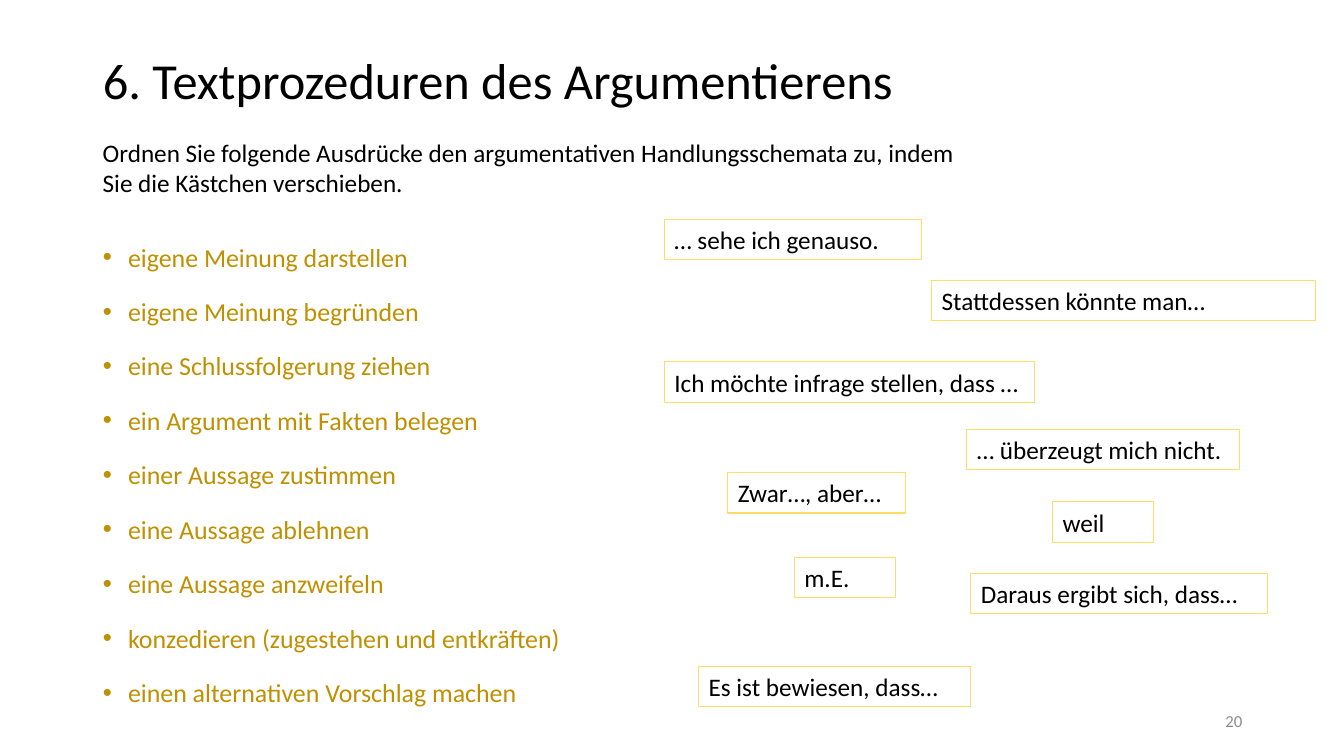
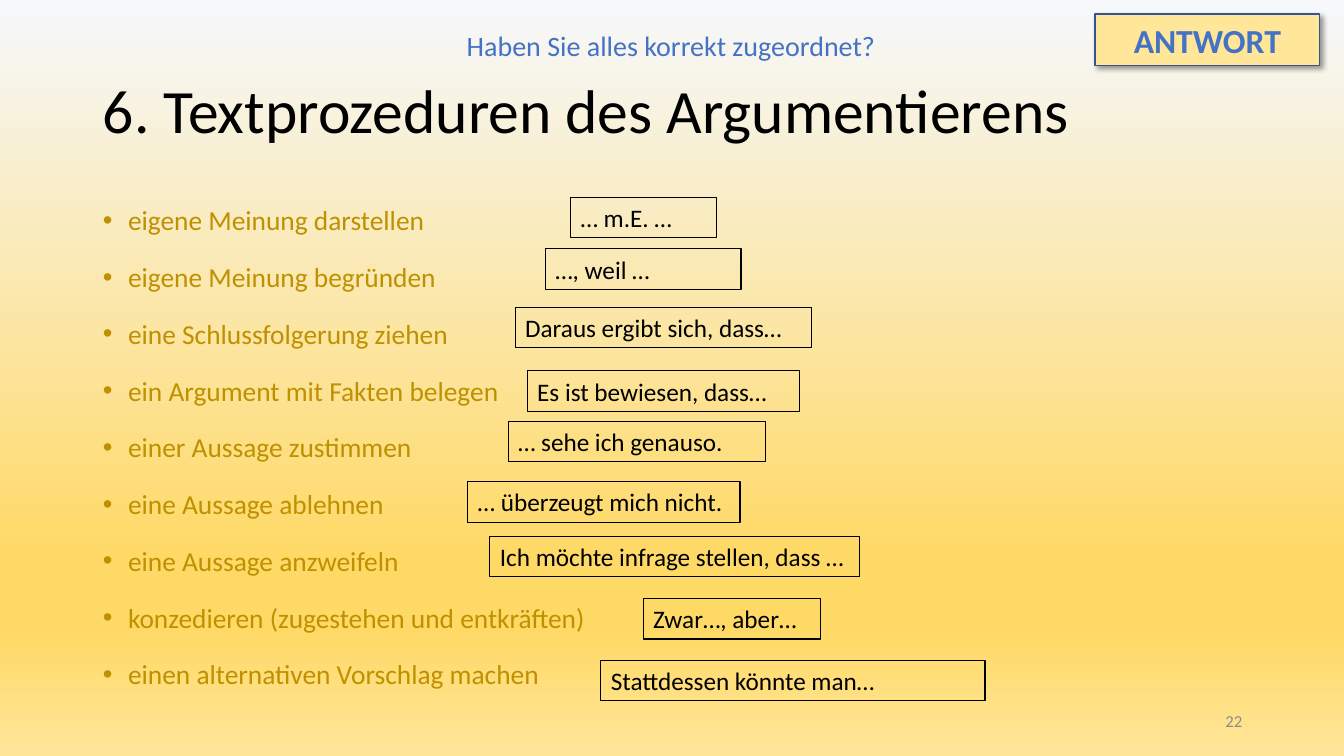
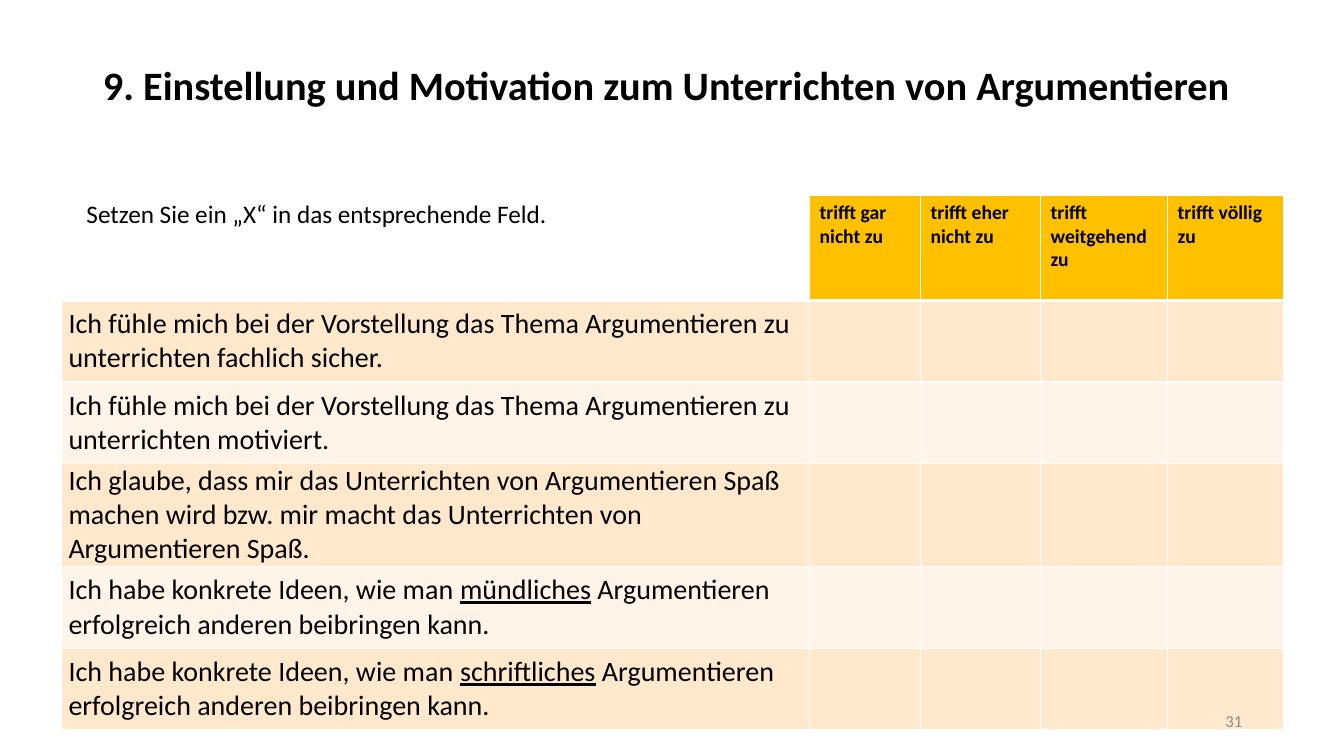
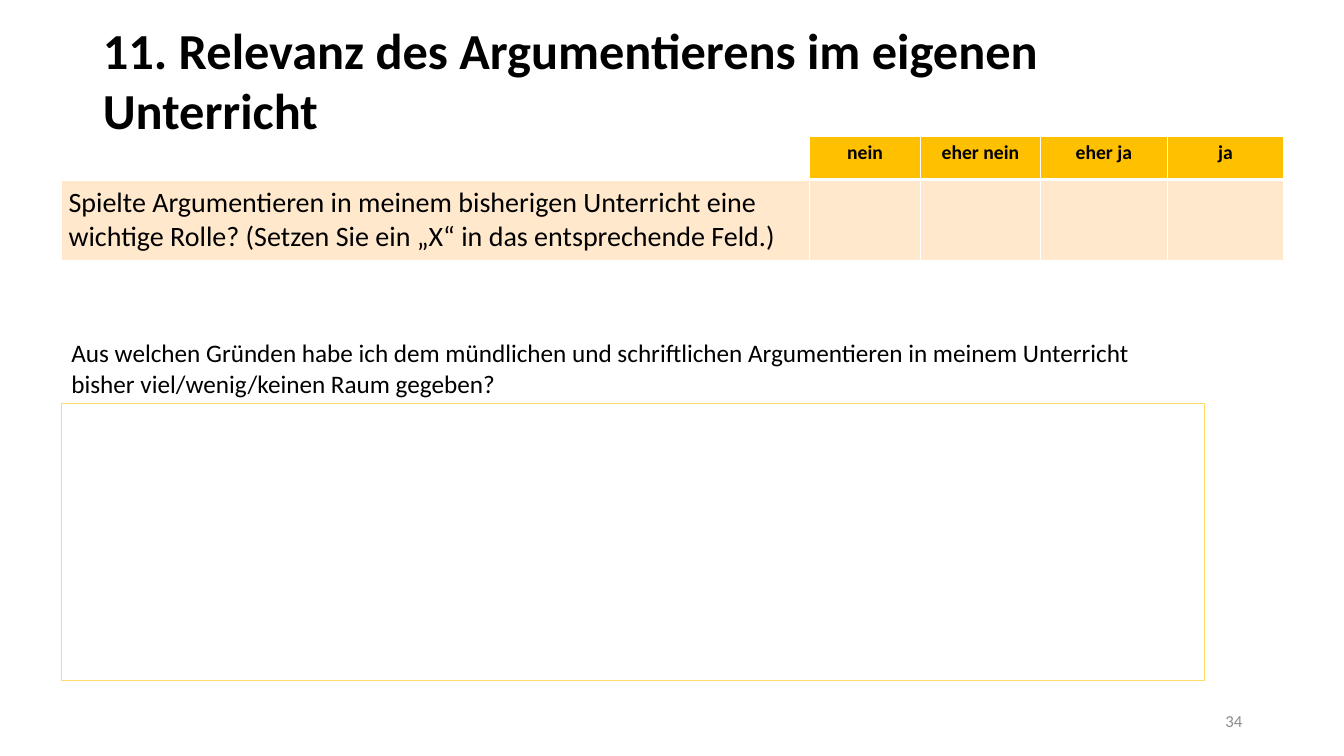
from lxml.etree import SubElement as sub
from pptx import Presentation
from pptx.dml.color import RGBColor
from pptx.enum.shapes import MSO_SHAPE
from pptx.enum.text import MSO_ANCHOR as ANC, MSO_AUTO_SIZE as AUTO, PP_ALIGN as ALIGN
from pptx.oxml import parse_xml
from pptx.oxml.ns import nsdecls, qn
from pptx.util import Inches, Pt

# Shared look
FONT = "Calibri"
HUE = {"ink": "000000", "gold": "BF9000", "edge": "FFDB69", "head": "FFC000",
       "odd": "FFE8CC", "even": "FFF4E7", "white": "FFFFFF", "blue": "4472C4",
       "navy": "325491", "cream": "FFE699", "grey": "8C8C8C"}
SKY = [(0, "F6F8FC"), (74, "FFD966"), (83, "FFD966"), (100, "FFE699")]
COLS = [7.42, 1.1, 1.19, 1.26, 1.15]
ROW, CARD = 0.81, 0.4

# Content
TOPIC = "6. Textprozeduren des Argumentierens"
ACTS = ["eigene Meinung darstellen", "eigene Meinung begründen",
        "eine Schlussfolgerung ziehen", "ein Argument mit Fakten belegen",
        "einer Aussage zustimmen", "eine Aussage ablehnen",
        "eine Aussage anzweifeln", "konzedieren (zugestehen und entkräften)",
        "einen alternativen Vorschlag machen"]
# text, width, loose place, solved place
CARDS = [
    ("Es ist bewiesen, dass…", 2.7, (6.93, 6.61), (5.23, 3.68)),
    ("… überzeugt mich nicht.", 2.7, (9.59, 4.26), (4.64, 4.78)),
    ("Ich möchte infrage stellen, dass …", 3.67, (6.59, 3.59), (4.86, 5.32)),
    ("… sehe ich genauso.", 2.55, (6.59, 2.18), (5.04, 4.18)),
    ("Daraus ergibt sich, dass…", 2.94, (9.63, 5.69), (5.11, 3.05)),
    ("Zwar…, aber…", 1.76, (7.22, 4.69), (6.38, 5.94)),
    ("Stattdessen könnte man…", 3.81, (9.24, 2.78), (5.96, 6.55)),
]
LOOSE = [("m.E.", 1, (7.88, 5.53)), ("weil", 1, (10.44, 4.98))]
SOLVED = [("… m.E. …", 1.45, (5.66, 1.96)), ("…, weil …", 1.94, (5.41, 2.47))]
TASK = ("Ordnen Sie folgende Ausdrücke den argumentativen Handlungsschemata zu, "
        "indem Sie die Kästchen verschieben.")
SCALE = ["trifft gar nicht zu", "trifft eher nicht zu", "trifft weitgehend zu",
         "trifft völlig zu"]
# Words between asterisks are underlined
CLAIMS = [
    "Ich fühle mich bei der Vorstellung das Thema Argumentieren zu unterrichten fachlich sicher.",
    "Ich fühle mich bei der Vorstellung das Thema Argumentieren zu unterrichten motiviert.",
    "Ich glaube, dass mir das Unterrichten von Argumentieren Spaß machen wird bzw. "
    "mir macht das Unterrichten von Argumentieren Spaß.",
    "Ich habe konkrete Ideen, wie man *mündliches* Argumentieren erfolgreich anderen beibringen kann.",
    "Ich habe konkrete Ideen, wie man *schriftliches* Argumentieren erfolgreich anderen beibringen kann.",
]
ROLE = ["Spielte Argumentieren in meinem bisherigen Unterricht eine wichtige Rolle? "
        "(Setzen Sie ein „X“ in das entsprechende Feld.)"]
WHY = ("Aus welchen Gründen habe ich dem mündlichen und schriftlichen Argumentieren "
       "in meinem Unterricht bisher viel/wenig/keinen Raum gegeben?")


# Helpers
def rgb(hue):
    return RGBColor.from_string(HUE[hue])


def place(shape, *at):
    for name, val in zip(("left", "top", "width", "height"), at):
        setattr(shape, name, Inches(val))


def write(par, text, size=18, hue="ink", bold=False, **fmt):
    for name, val in fmt.items():
        setattr(par, name, val)
    for i, part in enumerate(text.split("*")):
        run = par.add_run()
        run.text = part
        look = {"name": FONT, "size": Pt(size), "bold": bold}
        if i % 2:
            look["underline"] = True
        for name, val in look.items():
            setattr(run.font, name, val)
        run.font.color.rgb = rgb(hue)


def outline(shape, hue, width):
    shape.line.color.rgb = rgb(hue)
    shape.line.width = Pt(width)


def label(slide, at, text, edge=None, anchor=ANC.TOP, auto=AUTO.SHAPE_TO_FIT_TEXT, **fmt):
    box = slide.shapes.add_textbox(*map(Inches, at))
    frame = box.text_frame
    frame.word_wrap, frame.auto_size, frame.vertical_anchor = True, auto, anchor
    write(frame.paragraphs[0], text, **fmt)
    if edge:
        outline(box, edge, 0.75)


def panel(slide, at, fill, edge):
    box = slide.shapes.add_shape(MSO_SHAPE.RECTANGLE, *map(Inches, at))
    box.shadow.inherit = False
    box.fill.solid()
    box.fill.fore_color.rgb = rgb(fill)
    outline(box, edge, 1)
    return box


def start(deck, layout, title, at, size, bold=False, pitch=0.9):
    slide = deck.slides.add_slide(deck.slide_layouts[layout])
    head = slide.shapes.title
    place(head, *at)
    frame = head.text_frame
    frame.auto_size, frame.vertical_anchor = AUTO.NONE, ANC.MIDDLE
    write(frame.paragraphs[0], title, size, bold=bold, alignment=ALIGN.LEFT, line_spacing=pitch)
    return slide


def number(slide, page):
    label(slide, (9.42, 6.95, 3, 0.4), page, anchor=ANC.MIDDLE, auto=AUTO.NONE,
          size=12, hue="grey", alignment=ALIGN.RIGHT)


def bullets(slide, at, size):
    body = slide.placeholders[1]
    place(body, *at)
    frame = body.text_frame
    frame.auto_size = AUTO.NONE
    for i, act in enumerate(ACTS):
        par = frame.add_paragraph() if i else frame.paragraphs[0]
        prop = par._p.get_or_add_pPr()
        prop.set("marL", str(Inches(0.25)))
        prop.set("indent", str(-Inches(0.25)))
        sub(prop, qn("a:buChar")).set("char", "•")
        write(par, act, size, "gold", line_spacing=1.3, space_before=Pt(10 if i else 0))


def cards(slide, items, edge):
    for text, width, (x, y) in items:
        label(slide, (x, y, width, CARD), text, edge)


def paint(cell, hue, base):
    cell.fill.solid()
    cell.fill.fore_color.rgb = rgb(hue)
    prop = cell._tc.get_or_add_tcPr()
    for i, (side, width) in enumerate((("L", 1), ("R", 1), ("T", 1), ("B", base))):
        prop.insert(i, parse_xml(
            f'<a:ln{side} {nsdecls("a")} w="{Pt(width)}"><a:solidFill>'
            f'<a:srgbClr val="{HUE["white"]}"/></a:solidFill></a:ln{side}>'))


def survey(slide, top, marks, claims, heights, align):
    dims = (0.61, top, sum(COLS), sum(heights))
    table = slide.shapes.add_table(len(heights), len(COLS), *map(Inches, dims)).table
    table.first_row = table.horz_banding = False
    for col, width in zip(table.columns, COLS):
        col.width = Inches(width)
    for i, height in enumerate(heights):
        table.rows[i].height = Inches(height)
        for j in range(len(COLS)):
            hue = ("odd" if i % 2 else "even") if i else ("head" if j else "white")
            paint(table.cell(i, j), hue, 1 if i else 3)
    for j, mark in enumerate(marks, 1):
        write(table.cell(0, j).text_frame.paragraphs[0], mark, 14, bold=True, alignment=align)
    for i, claim in enumerate(claims, 1):
        cell = table.cell(i, 0)
        cell.vertical_anchor = ANC.MIDDLE
        cell.margin_left = cell.margin_right = Inches(0.07)
        cell.margin_top = cell.margin_bottom = 0
        write(cell.text_frame.paragraphs[0], claim, 20)


# Slides
def sort_task(deck):
    slide = start(deck, 1, TOPIC, (0.92, 0.4, 11.5, 0.86), 36)
    bullets(slide, (0.92, 2.25, 6.22, 5.08), 18.5)
    cards(slide, LOOSE + [(t, w, loose) for t, w, loose, _ in CARDS], "edge")
    label(slide, (0.92, 1.31, 8.72, 0.71), TASK)
    return slide


def sort_key(deck):
    slide = start(deck, 1, TOPIC, (0.92, 0.4, 11.5, 1.45), 44)
    fill = slide.background.fill
    fill.gradient()
    fill.gradient_angle = 270
    stops = slide.element.find(".//" + qn("a:gsLst"))
    stops.clear()
    for pos, tint in SKY:
        stop = sub(stops, qn("a:gs"), pos=str(pos * 1000))
        sub(stop, qn("a:srgbClr"), val=tint)
    bullets(slide, (0.92, 1.87, 11.5, 5.29), 19.6)
    cards(slide, SOLVED + [(t, w, done) for t, w, _, done in CARDS], "ink")
    label(slide, (4.53, 0.23, 4.28, 0.44), "Haben Sie alles korrekt zugeordnet?", size=20, hue="blue")
    badge = panel(slide, (10.86, 0.14, 2.23, 0.51), "cream", "navy")
    badge.text_frame.vertical_anchor = ANC.MIDDLE
    write(badge.text_frame.paragraphs[0], "ANTWORT", 24, "blue", True, alignment=ALIGN.CENTER)
    glow = badge._element.spPr.find(qn("a:effectLst"))
    shade = sub(glow, qn("a:outerShdw"), blurRad=str(Pt(4)), dist=str(Pt(3)),
                dir="2700000", algn="tl", rotWithShape="0")
    tone = sub(shade, qn("a:srgbClr"), val=HUE["ink"])
    sub(tone, qn("a:alpha"), val="40000")
    return slide


def attitude(deck):
    slide = start(deck, 5, "9. Einstellung und Motivation zum Unterrichten von Argumentieren",
                  (0.92, 0.4, 11.85, 0.93), 28.8, True)
    survey(slide, 1.94, SCALE, CLAIMS, [1.04, ROW, ROW, 1.02, ROW, ROW], ALIGN.LEFT)
    label(slide, (0.76, 1.92, 5.06, 0.4), "Setzen Sie ein „X“ in das entsprechende Feld.")
    return slide


def relevance(deck):
    slide = start(deck, 5, "11. Relevanz des Argumentierens im eigenen Unterricht",
                  (0.92, 0.4, 11.5, 0.77), 36, True, 1.0)
    survey(slide, 1.35, ["nein", "eher nein", "eher ja", "ja"], ROLE, [0.43, ROW], ALIGN.CENTER)
    label(slide, (0.61, 3.3, 11.34, 0.71), WHY)
    panel(slide, (0.61, 4, 11.34, 2.75), "white", "edge")
    return slide


def main():
    deck = Presentation()
    deck.slide_width, deck.slide_height = Inches(13.33), Inches(7.5)
    pages = {"20": sort_task, "22": sort_key, "31": attitude, "34": relevance}
    for page, build in pages.items():
        # The number goes last, in front of everything else
        number(build(deck), page)
    deck.save("out.pptx")


if __name__ == "__main__":
    main()
